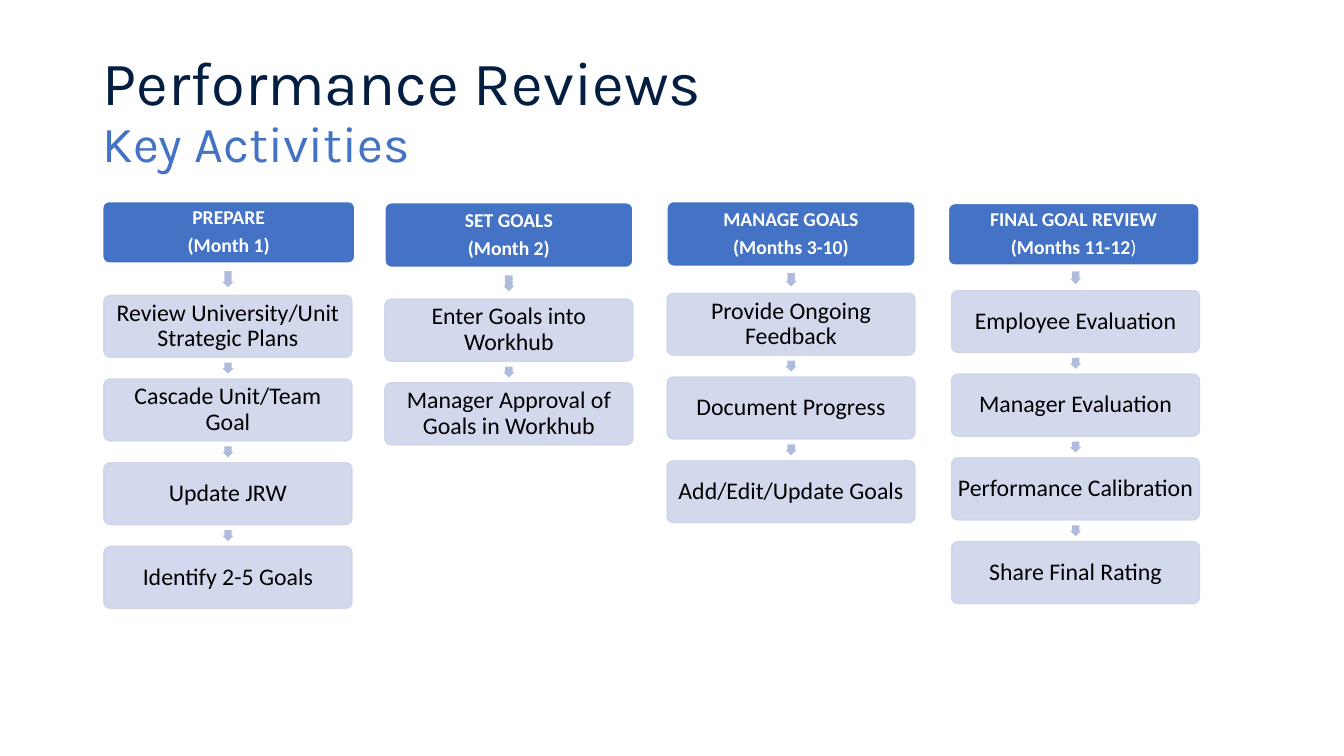
import pptx
import pptx.dml.color
import pptx.enum.shapes
import pptx.enum.text
import pptx.oxml.ns
import pptx.util
from lxml import etree

Cm = pptx.util.Cm
Pt = pptx.util.Pt
SHAPES = pptx.enum.shapes.MSO_SHAPE
ALIGN = pptx.enum.text.PP_ALIGN

COLORS = {
    "navy": "041E42",
    "blue": "4472C4",
    "step": "CFD5EA",
    "arrow": "B0BCDE",
    "white": "FFFFFF",
    "black": "000000",
}

# Lengths in centimetres
STEP_WIDTH, STEP_HEIGHT, STEP_PITCH = 6.25, 1.56, 2.11
ARROW_THICKNESS = 0.28

# Header lines hold their runs; only the first run of a line is bold.
PHASES = [
    {"header": (2.59, 5.08, 6.35, 1.55), "lines": [["PREPARE"], ["(Month 1)"]],
     "left": 2.62, "top": 7.44,
     "steps": ["Review University/Unit Strategic Plans", "Cascade Unit/Team Goal",
               "Update JRW", "Identify 2-5 Goals"]},
    {"header": (9.7, 5.11, 6.25, 1.63), "lines": [["SET GOALS"], ["(Month 2)"]],
     "left": 9.7, "top": 7.54,
     "steps": ["Enter Goals into Workhub", "Manager Approval of Goals in Workhub"]},
    {"header": (16.81, 5.08, 6.25, 1.63), "lines": [["MANAGE GOALS"], ["(Months 3-10)"]],
     "left": 16.81, "top": 7.39,
     "steps": ["Provide Ongoing Feedback", "Document Progress", "Add/Edit/Update Goals"]},
    {"header": (23.9, 5.13, 6.32, 1.55),
     "lines": [["FINAL GOAL REVIEW"], ["(Months 11-12", ")"]],
     "left": 23.98, "top": 7.32,
     "steps": ["Employee Evaluation", "Manager Evaluation",
               "Performance Calibration", "Share Final Rating"]},
]


def add_text(paragraph, text, size, color, font="Calibri", bold=False,
             align=ALIGN.CENTER, space_after=0):
    """Append a formatted run and set the format of its paragraph."""
    paragraph.alignment = align
    paragraph.line_spacing = 0.9
    paragraph.space_after = Pt(space_after)
    run = paragraph.add_run()
    run.text = text
    run.font.name = font
    run.font.size = Pt(size)
    run.font.bold = bold
    run.font.color.rgb = pptx.dml.color.RGBColor.from_string(COLORS[color])


def add_block(slide, kind, box, fill, line=None, opacity=None):
    """Add a filled shape; box is left, top, width, height in centimetres."""
    shape = slide.shapes.add_shape(kind, *[Cm(length) for length in box])
    shape.shadow.inherit = False
    shape.fill.solid()
    shape.fill.fore_color.rgb = pptx.dml.color.RGBColor.from_string(COLORS[fill])
    if line:
        shape.line.color.rgb = pptx.dml.color.RGBColor.from_string(COLORS[line])
        shape.line.width = Pt(1)
    else:
        shape.line.fill.background()
    if opacity:
        for color in shape._element.spPr.iter(pptx.oxml.ns.qn("a:srgbClr")):
            etree.SubElement(color, pptx.oxml.ns.qn("a:alpha"), val=str(opacity * 1000))
    shape.adjustments[0] = 0.667 if kind == SHAPES.RIGHT_ARROW else 0.1
    frame = shape.text_frame
    frame.word_wrap = True
    frame.vertical_anchor = pptx.enum.text.MSO_ANCHOR.MIDDLE
    frame.margin_left = frame.margin_right = Cm(0.1)
    frame.margin_top = frame.margin_bottom = Cm(0.1)
    return shape


presentation = pptx.Presentation()
presentation.slide_width = Cm(33.87)
presentation.slide_height = Cm(19.05)
slide = presentation.slides.add_slide(presentation.slide_layouts[5])

title = slide.shapes.title
title.left, title.top, title.width, title.height = Cm(2.33), Cm(1.01), Cm(29.21), Cm(3.68)
title.text_frame.auto_size = pptx.enum.text.MSO_AUTO_SIZE.NONE
title.text_frame.vertical_anchor = pptx.enum.text.MSO_ANCHOR.MIDDLE
heading = title.text_frame.paragraphs[0]
add_text(heading, "Performance Reviews", 44, "navy", font="Karla", align=ALIGN.LEFT)
heading.add_line_break()
add_text(heading, "Key Activities", 36, "blue", font="Karla", align=ALIGN.LEFT)

for phase in PHASES:
    header = add_block(slide, SHAPES.ROUNDED_RECTANGLE, phase["header"], "blue", line="white")
    for number, runs in enumerate(phase["lines"]):
        frame = header.text_frame
        paragraph = frame.add_paragraph() if number else frame.paragraphs[0]
        for position, text in enumerate(runs):
            add_text(paragraph, text, 14, "white", bold=position == 0, space_after=5)

    bottom = phase["header"][1] + phase["header"][3]
    center = phase["left"] + STEP_WIDTH / 2
    for number, text in enumerate(phase["steps"]):
        top = phase["top"] + number * STEP_PITCH
        # Each arrow fills half of the gap above its step.
        length = (top - bottom) / 2
        arrow_box = (center - length / 2, (top + bottom - ARROW_THICKNESS) / 2,
                     length, ARROW_THICKNESS)
        arrow = add_block(slide, SHAPES.RIGHT_ARROW, arrow_box, "arrow")
        arrow.rotation = 90

        step_box = (phase["left"], top, STEP_WIDTH, STEP_HEIGHT)
        step = add_block(slide, SHAPES.ROUNDED_RECTANGLE, step_box, "step",
                         line="step", opacity=90)
        add_text(step.text_frame.paragraphs[0], text, 17, "black", space_after=6)
        bottom = top + STEP_HEIGHT

presentation.save("out.pptx")
